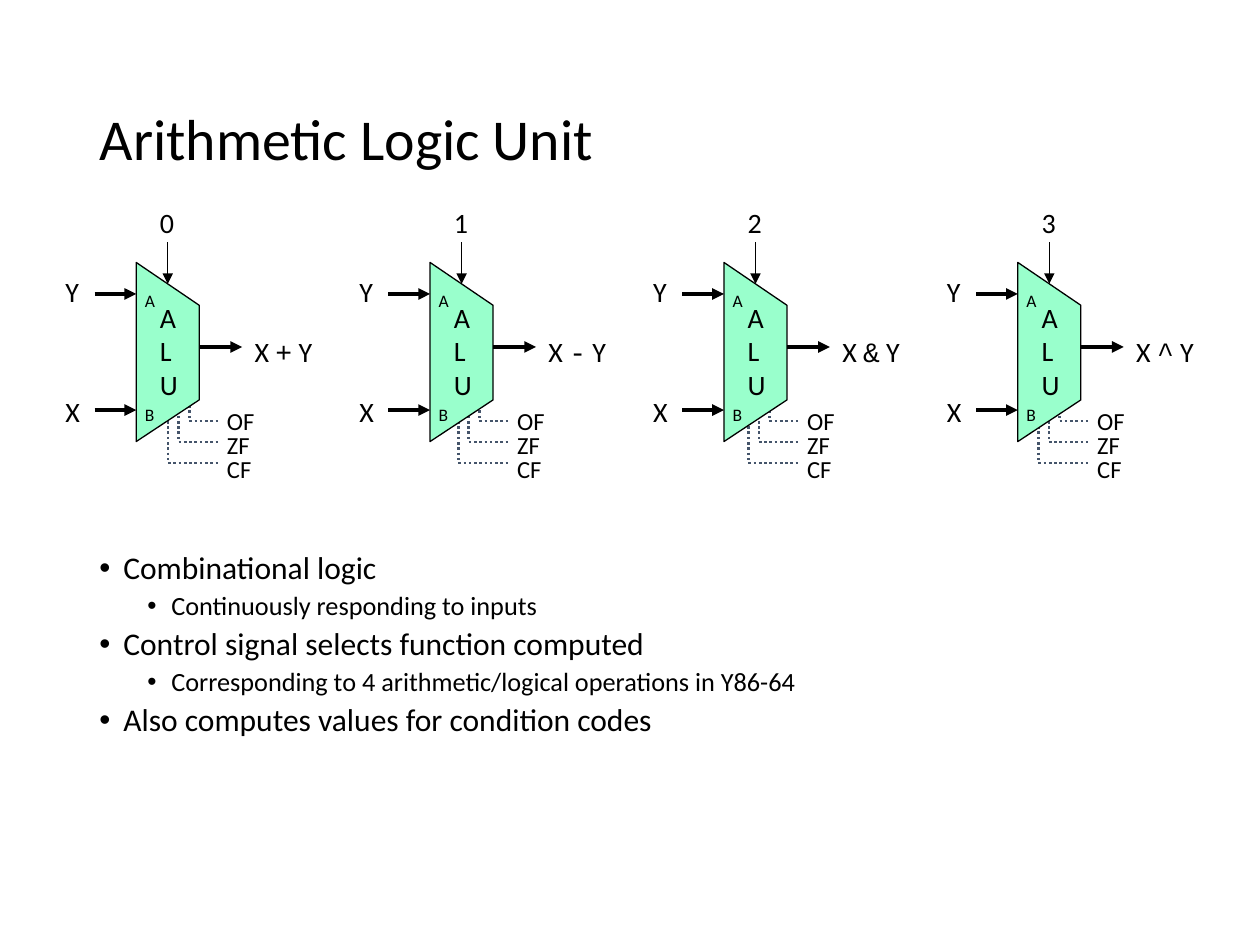
from lxml import etree
from pptx import Presentation
from pptx import util as u
from pptx.dml.color import RGBColor
from pptx.enum import dml, shapes, text
from pptx.oxml import ns

BLACK = RGBColor(0x00, 0x00, 0x00)
MINT = RGBColor(0x99, 0xFF, 0xCC)
SLATE = RGBColor(0x44, 0x54, 0x6A)
FONT = "Calibri"
CODE_FONT = "Courier New"
OPERATORS = ["+", "-", "&", "^"]
FLAGS = ["OF", "ZF", "CF"]
BULLETS = [
    (1, "Combinational logic"),
    (2, "Continuously responding to inputs"),
    (1, "Control signal selects function computed"),
    (2, "Corresponding to 4 arithmetic/logical operations in Y86-64"),
    (1, "Also computes values for condition codes"),
]


def add_run(p, words, size, font=FONT):
    """Append one formatted run to a paragraph."""
    r = p.add_run()
    r.text = words
    r.font.size = u.Pt(size)
    r.font.name = font
    r.font.color.rgb = BLACK


def add_label(s, box, lines, size, wrap=False, inset=0.1):
    """Add a text box whose lines are lists of (words, font) runs."""
    sp = s.shapes.add_textbox(*map(u.Inches, box))
    tf = sp.text_frame
    tf.word_wrap = wrap
    tf.auto_size = text.MSO_AUTO_SIZE.SHAPE_TO_FIT_TEXT
    tf.margin_left = tf.margin_right = u.Inches(inset)
    for i, runs in enumerate(lines):
        p = tf.add_paragraph() if i else tf.paragraphs[0]
        for words, font in runs:
            add_run(p, words, size, font)


def add_outline(s, points, color, width, close):
    """Add a freeform through the given points."""
    corners = [(u.Inches(x), u.Inches(y)) for x, y in points]
    builder = s.shapes.build_freeform(*corners[0])
    builder.add_line_segments(corners[1:], close=close)
    sp = builder.convert_to_shape()
    sp.shadow.inherit = False
    sp.line.color.rgb = color
    sp.line.width = u.Pt(width)
    return sp


def add_arrow(s, x, y, dx, dy, width):
    """Add a straight arrow from a point by an offset."""
    ends = map(u.Inches, (x, y, x + dx, y + dy))
    cx = s.shapes.add_connector(shapes.MSO_CONNECTOR.STRAIGHT, *ends)
    cx.line.color.rgb = BLACK
    cx.line.width = u.Pt(width)
    etree.SubElement(cx.line._get_or_add_ln(), ns.qn("a:tailEnd"), type="triangle")
    etree.SubElement(cx._element.spPr, ns.qn("a:effectLst"))


def draw_flags(s, left, top):
    """Draw the dotted condition-code leads and their names."""
    right = left + 0.42
    for i, flag in enumerate(FLAGS):
        x = right - 0.25 - i / 12
        start, end = top + i / 12, top + (i + 1) / 6
        lead = add_outline(s, [(x, start), (x, end), (right, end)], SLATE, 1.5, False)
        lead.fill.background()
        lead.line.dash_style = dml.MSO_LINE.ROUND_DOT
    for i, flag in enumerate(FLAGS):
        box = (right, top + 0.19 * i, 0.36, 0.31)
        add_label(s, box, [[(flag, FONT)]], 14, inset=0.05)


def draw_alu(s, left, top, control, operator):
    """Draw one unit with its inputs, control signal and result."""
    body, edge = left + 0.66, left + 1.16
    outline = [(body, top + 0.5), (edge, top + 0.84), (edge, top + 1.59), (body, top + 1.92)]
    add_arrow(s, body + 0.25, top + 0.34, 0, 0.33, 0.75)
    sp = add_outline(s, outline, BLACK, 0.75, True)
    sp.fill.solid()
    sp.fill.fore_color.rgb = MINT
    add_label(s, (left + 0.75, top + 0.75, 0.42, 0.9), [[(c, FONT)] for c in "ALU"], 16, wrap=True)
    for name, name_y, arrow_y, port, port_y in [("Y", 0.55, 0.75, "A", 0.67),
                                                ("X", 1.5, 1.67, "B", 1.57)]:
        add_arrow(s, left + 0.33, top + arrow_y, 0.33, 0, 2.25)
        add_label(s, (left, top + name_y, 0.35, 0.37), [[(name, FONT)]], 16)
        add_label(s, (left + 0.63, top + port_y, 0.29, 0.27), [[(port, FONT)]], 10)
    add_arrow(s, edge, top + 1.17, 0.34, 0, 2.25)
    result = [("X ", FONT), (operator, CODE_FONT), (" Y", FONT)]
    add_label(s, (left + 1.5, top + 1.02, 0.75, 0.37), [result], 16)
    add_label(s, (left + 0.75, top, 0.32, 0.37), [[(str(control), FONT)]], 16)


def fill_title(s, left, top, width, height):
    """Place and format the title placeholder."""
    sp = s.shapes.title
    sp.left, sp.top, sp.width, sp.height = map(u.Inches, (left, top, width, height))
    tf = sp.text_frame
    tf.auto_size = text.MSO_AUTO_SIZE.NONE
    tf.vertical_anchor = text.MSO_ANCHOR.MIDDLE
    p = tf.paragraphs[0]
    p.alignment = text.PP_ALIGN.LEFT
    p.line_spacing = 0.9
    add_run(p, "Arithmetic Logic Unit", 33)


def draw_bullets(s, left, top, width, height):
    """Write the two-level bullet list."""
    tf = s.shapes.add_textbox(*map(u.Inches, (left, top, width, height))).text_frame
    tf.word_wrap = True
    for i, (level, words) in enumerate(BULLETS):
        p = tf.add_paragraph() if i else tf.paragraphs[0]
        p.level = level - 1
        p.line_spacing = 0.9
        p.space_before = u.Pt(3.8)
        pPr = p._p.get_or_add_pPr()
        pPr.set("marL", str(u.Inches(0.56 if level == 1 else 0.94)))
        pPr.set("indent", str(u.Inches(-0.19)))
        etree.SubElement(pPr, ns.qn("a:buFont"), typeface="Arial")
        etree.SubElement(pPr, ns.qn("a:buChar"), char="•")
        add_run(p, words, 18 if level == 1 else 15)


def main():
    """Build the slide and save it."""
    prs = Presentation()
    prs.slide_width, prs.slide_height = u.Inches(9.99), u.Inches(7.49)
    s = prs.slides.add_slide(prs.slide_layouts[5])
    fill_title(s, 0.69, 0.4, 8.61, 1.45)
    for i in range(len(OPERATORS)):
        draw_flags(s, 1.33 + 2.3 * i, 3.17)
    for i, operator in enumerate(OPERATORS):
        draw_alu(s, 0.42 + 2.33 * i, 1.58, i, operator)
    draw_bullets(s, 0.32, 4.33, 9.07, 2.7)
    prs.save("out.pptx")


if __name__ == "__main__":
    main()
